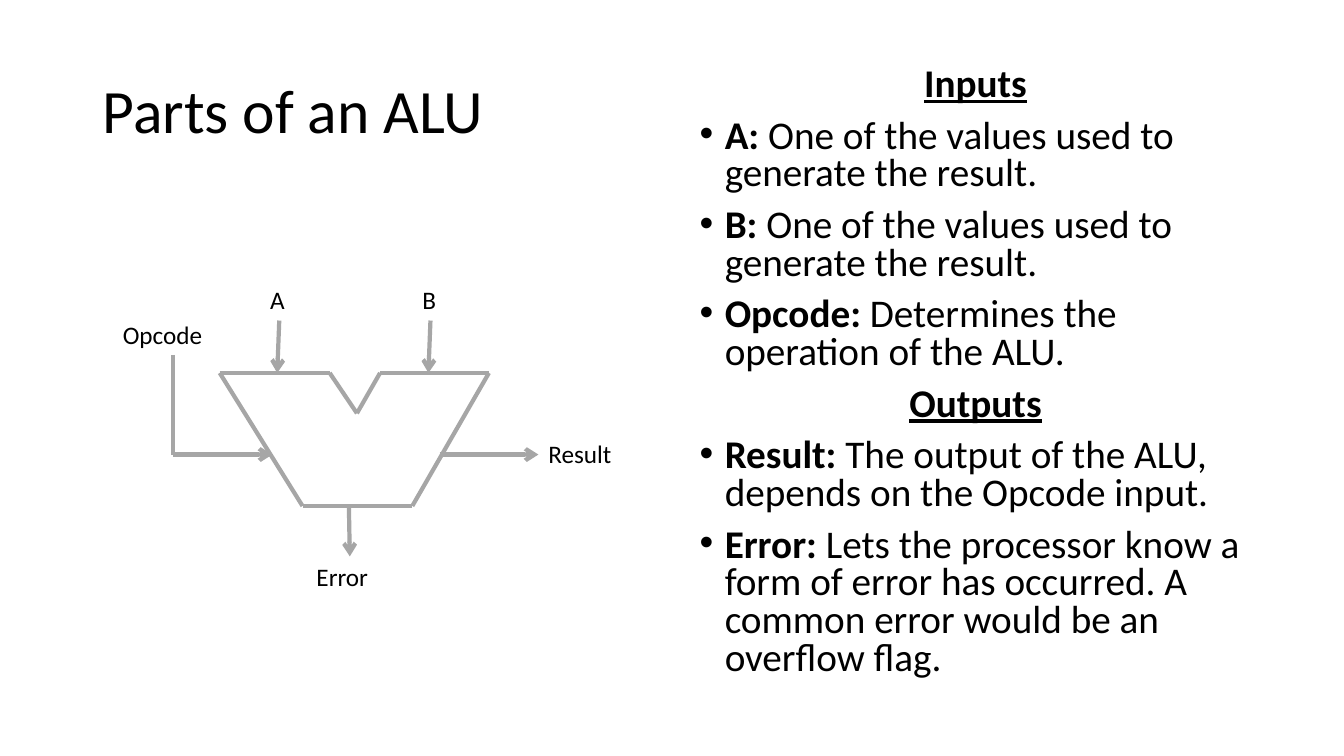
from itertools import pairwise
from lxml import etree
from pptx import Presentation, util as u
from pptx.dml.color import RGBColor
from pptx.enum import shapes, text
from pptx.oxml.ns import qn

BLACK = RGBColor(0x00, 0x00, 0x00)
GREY = RGBColor(0xA6, 0xA6, 0xA6)
FONT = "Calibri"

deck = Presentation()
deck.slide_width, deck.slide_height = u.Inches(13.33), u.Inches(7.5)
page = deck.slides.add_slide(deck.slide_layouts[6])

# Grid: 100 columns by 100 rows
COLUMN, ROW = deck.slide_width / 100, deck.slide_height / 100


def add_text(paras, left, top, width, height, size, anchor=text.MSO_ANCHOR.TOP,
             line_spacing=1.0, space_before=0):
    """Each para is a (bold lead, plain rest) pair; a para without rest is a heading."""
    box = page.shapes.add_textbox(round(left * COLUMN), round(top * ROW),
                                  round(width * COLUMN), round(height * ROW))
    frame = box.text_frame
    frame.word_wrap = True
    frame.vertical_anchor = anchor
    for index, (lead, rest) in enumerate(paras):
        para = frame.paragraphs[0] if index == 0 else frame.add_paragraph()
        para.line_spacing = line_spacing
        para.space_before = u.Pt(space_before)
        for words, bold in ((lead, True), (rest, False)):
            if words:
                span = para.add_run()
                span.text = words
                span.font.name, span.font.size = FONT, u.Pt(size)
                span.font.bold = bold
                span.font.color.rgb = BLACK
        if lead and rest:
            props = para._p.get_or_add_pPr()
            props.set("marL", str(u.Inches(0.25)))
            props.set("indent", str(-u.Inches(0.25)))
            etree.SubElement(props, qn("a:buFont"), typeface="Arial")
            etree.SubElement(props, qn("a:buChar"), char="•")
        elif lead:
            para.alignment = text.PP_ALIGN.CENTER
            para.runs[0].font.underline = True


def add_line(start, end, arrow=False):
    line = page.shapes.add_connector(
        shapes.MSO_CONNECTOR.STRAIGHT,
        round(start[0] * COLUMN), round(start[1] * ROW),
        round(end[0] * COLUMN), round(end[1] * ROW))
    line.line.color.rgb = GREY
    line.line.width = u.Pt(3)
    if arrow:
        etree.SubElement(line.line._get_or_add_ln(), qn("a:tailEnd"), type="arrow")
    etree.SubElement(line._element.spPr, qn("a:effectLst"))


# Title
add_text([("", "Parts of an ALU")], 6.9, 5.33, 86.27, 19.33, size=44,
         anchor=text.MSO_ANCHOR.MIDDLE, line_spacing=0.9)

# Inputs and outputs
add_text([
    ("Inputs", ""),
    ("A: ", "One of the values used to generate the result."),
    ("B:", " One of the values used to generate the result."),
    ("Opcode: ", "Determines the operation of the ALU."),
    ("Outputs", ""),
    ("Result: ", "The output of the ALU, depends on the Opcode input."),
    ("Error: ", "Lets the processor know a form of error has occurred. "
                "A common error would be an overflow flag."),
], 51.31, 8.27, 42.54, 87.33, size=28, line_spacing=0.8, space_before=10)

# ALU outline
TOP, NOTCH, MIDDLE, BOTTOM = 49.33, 54.67, 60.13, 66.93
outline = [(16.35, TOP), (24.53, TOP), (26.56, NOTCH), (28.28, TOP),
           (36.38, TOP), (30.68, BOTTOM), (22.51, BOTTOM)]
for start, end in pairwise(outline + outline[:1]):
    add_line(start, end)

# Signals
opcode_corner = (12.9, MIDDLE)
add_line((12.9, 46.93), opcode_corner)
for start, end in [
    (opcode_corner, (20.26, MIDDLE)),
    ((20.78, 42.4), (20.63, TOP)),
    ((32.03, 42.4), (31.88, TOP)),
    ((32.71, MIDDLE), (40.06, MIDDLE)),
    ((25.96, BOTTOM), (26.03, 73.6)),
]:
    add_line(start, end, arrow=True)

# Signal labels
for label, left, top, width in [
    ("A", 19.35, 36.93, 2.78),
    ("B", 30.68, 36.93, 2.78),
    ("Opcode", 8.4, 41.6, 8.85),
    ("Result", 40.06, 57.33, 6.45),
    ("Error", 22.81, 73.6, 6.45),
]:
    add_text([("", label)], left, top, width, 5.33, size=18)

deck.save("out.pptx")
